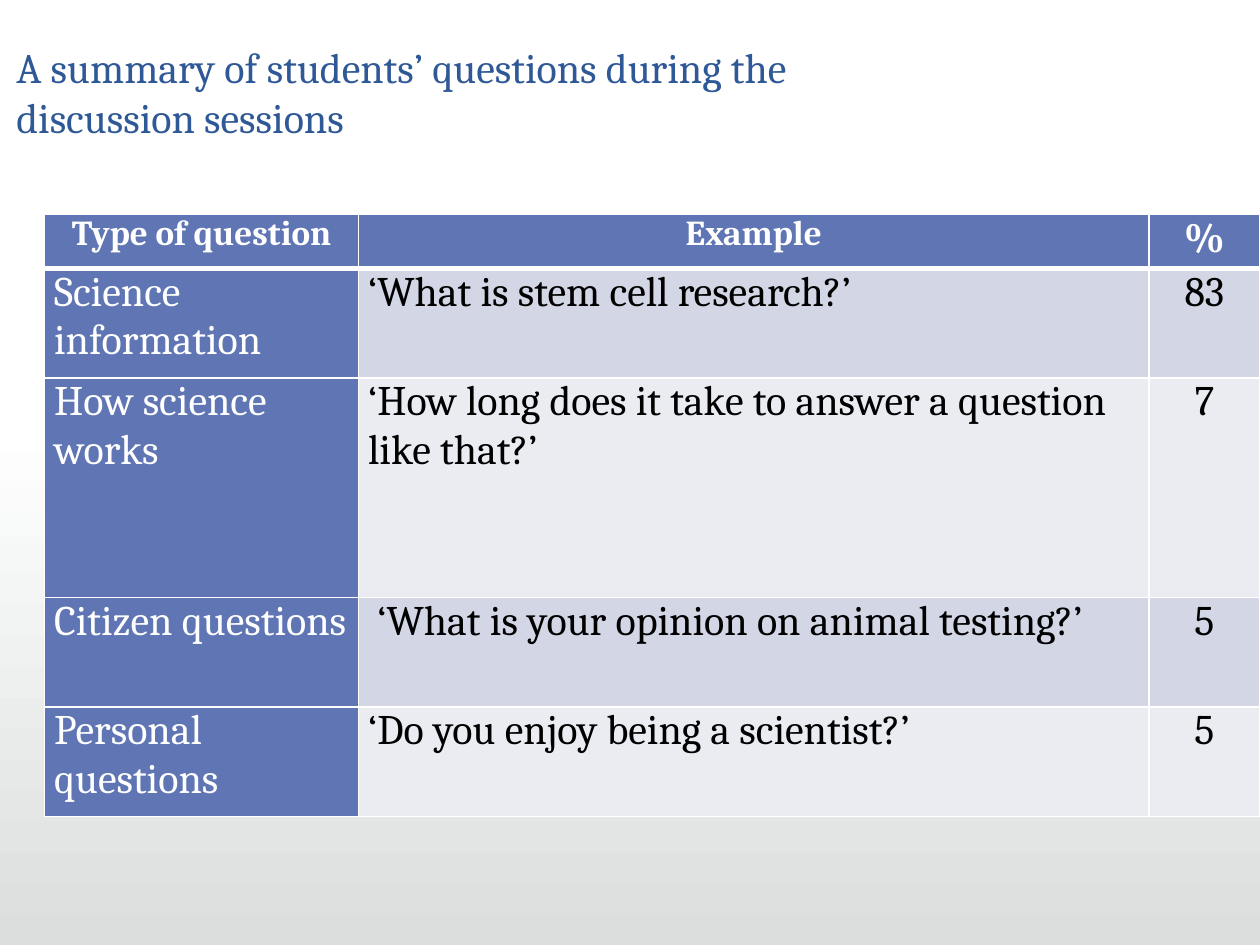
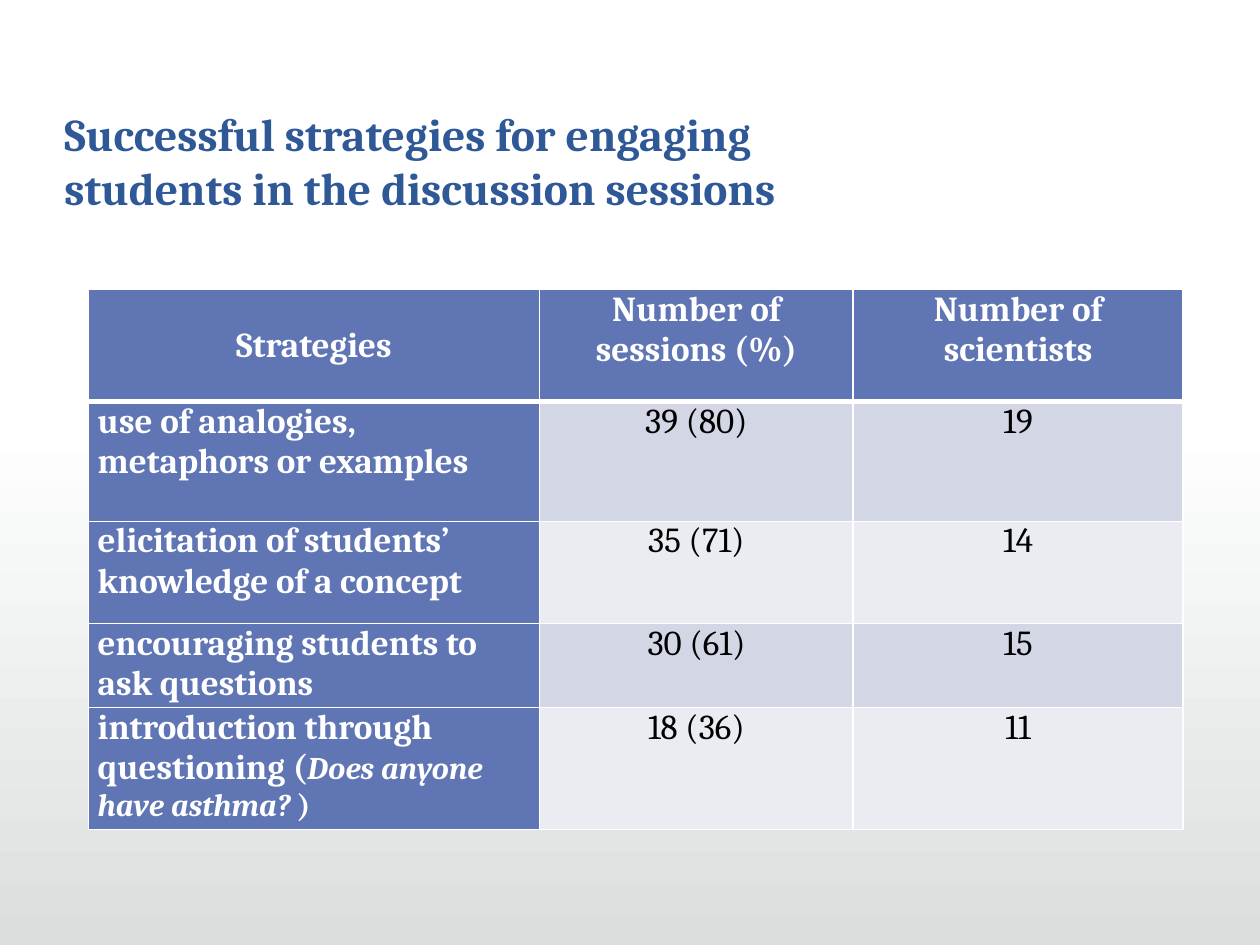
from lxml.etree import SubElement
from pptx import Presentation
from pptx.dml.color import RGBColor
from pptx.enum.shapes import MSO_SHAPE
from pptx.enum.text import MSO_ANCHOR, PP_ALIGN
from pptx.oxml.ns import qn
from pptx.util import Cm, Pt

FONT = "Cambria"
TITLE_BLUE = RGBColor(0x2F, 0x58, 0x97)
HEADER_BLUE = RGBColor(0x60, 0x76, 0xB4)
BAND_DARK = RGBColor(0xD2, 0xD6, 0xE5)
BAND_LIGHT = RGBColor(0xEA, 0xEC, 0xF2)
FLOOR_GREY = RGBColor(0xDC, 0xDE, 0xDE)
WHITE = RGBColor(0xFF, 0xFF, 0xFF)
BLACK = RGBColor(0x00, 0x00, 0x00)

# Each cell is a string, or a list of (text, size, italic) spans
slides = [
    {
        "title": "A summary of students’ questions during the discussion sessions",
        "title_at": (0.33, 0.71, 17.4, 2.9), "title_size": 24, "title_bold": False,
        "table_at": (0.9, 4.32), "size": 24, "label_bold": False,
        "columns": (6.33, 15.93, 2.24), "heights": (1.09, 2.21, 4.42, 2.21, 2.21),
        "centred": (2,), "header_anchor": MSO_ANCHOR.TOP,
        "rows": [
            [[("Type of question", 20, False)], [("Example", 20, False)], "%"],
            ["Science information", "‘What is stem cell research?’", "83"],
            ["How science works",
             "‘How long does it take to answer a question like that?’", "7"],
            ["Citizen questions", " ‘What is your opinion on animal testing?’", "5"],
            ["Personal questions", "‘Do you enjoy being a scientist?’", "5"],
        ],
    },
    {
        "title": "Successful strategies for engaging students in the discussion sessions",
        "title_at": (1.3, 2.01, 16.94, 3), "title_size": 26, "title_bold": True,
        "table_at": (1.78, 5.84), "size": 20, "label_bold": True,
        "columns": (9.1, 6.32, 6.65), "heights": (2.26, 2.41, 2.06, 1.42, 1.88),
        "centred": (1, 2), "header_anchor": MSO_ANCHOR.MIDDLE,
        "rows": [
            ["Strategies", "Number of sessions (%)", "Number of scientists"],
            ["use of analogies, metaphors or examples", "39 (80)", "19"],
            ["elicitation of students’ knowledge of a concept", "35 (71)", "14"],
            ["encouraging students to ask questions", "30 (61)", "15"],
            [[("introduction through questioning (", 20, False),
              ("Does anyone have asthma?", 18, True), (" )", 18, False)],
             "18 (36)", "11"],
        ],
    },
]


def add_span(para, text, size, color, bold, italic=False):
    span = para.add_run()
    span.text = text
    span.font.name = FONT
    span.font.size = Pt(size)
    span.font.color.rgb = color
    span.font.bold = bold
    span.font.italic = italic


def set_borders(cell, bottom_width):
    properties = cell._tc.get_or_add_tcPr()
    for position, side in enumerate(("lnL", "lnR", "lnT", "lnB")):
        width = bottom_width if side == "lnB" else 1
        line = properties.makeelement(qn(f"a:{side}"), {"w": str(Pt(width))})
        fill = SubElement(line, qn("a:solidFill"))
        SubElement(fill, qn("a:srgbClr"), val=str(WHITE))
        properties.insert(position, line)


deck = Presentation()
deck.slide_width = Cm(25.4)
deck.slide_height = Cm(19.05)

for content in slides:
    page = deck.slides.add_slide(deck.slide_layouts[6])

    # Backdrop: white above, fading to grey below
    for top in (0, 8.46):
        band = page.shapes.add_shape(
            MSO_SHAPE.RECTANGLE, Cm(-0.23), Cm(top), Cm(25.63), Cm(10.59))
        band.shadow.inherit = False
        band.line.fill.background()
        if top == 0:
            band.fill.solid()
            band.fill.fore_color.rgb = WHITE
        else:
            band.fill.gradient()
            band.fill.gradient_angle = 270
            for stop, color in zip(band.fill.gradient_stops, (WHITE, FLOOR_GREY)):
                stop.color.rgb = color

    # Title
    box = page.shapes.add_textbox(*[Cm(length) for length in content["title_at"]])
    frame = box.text_frame
    frame.word_wrap = True
    frame.margin_left = 0
    add_span(frame.paragraphs[0], content["title"], content["title_size"],
             TITLE_BLUE, content["title_bold"])

    # Table
    left, top = content["table_at"]
    columns, heights = content["columns"], content["heights"]
    table = page.shapes.add_table(
        len(heights), len(columns), Cm(left), Cm(top),
        Cm(sum(columns)), Cm(sum(heights))).table
    for column, width in zip(table.columns, columns):
        column.width = Cm(width)
    for row, height in zip(table.rows, heights):
        row.height = Cm(height)

    for row_number, texts in enumerate(content["rows"]):
        for column_number, text in enumerate(texts):
            is_header = row_number == 0
            is_label = column_number == 0
            cell = table.cell(row_number, column_number)
            cell.margin_left = cell.margin_right = Cm(0.19)
            cell.margin_top = cell.margin_bottom = 0
            cell.fill.solid()
            if is_header or is_label:
                cell.fill.fore_color.rgb = HEADER_BLUE
            else:
                cell.fill.fore_color.rgb = BAND_DARK if row_number % 2 else BAND_LIGHT
            set_borders(cell, 3 if is_header else 1)
            if is_header and is_label:
                cell.vertical_anchor = content["header_anchor"]

            para = cell.text_frame.paragraphs[0]
            if is_header or column_number in content["centred"]:
                para.alignment = PP_ALIGN.CENTER
            spans = [(text, content["size"], False)] if isinstance(text, str) else text
            for words, size, italic in spans:
                add_span(para, words, size,
                         WHITE if is_header or is_label else BLACK,
                         is_header or (is_label and content["label_bold"]), italic)

deck.save("out.pptx")
